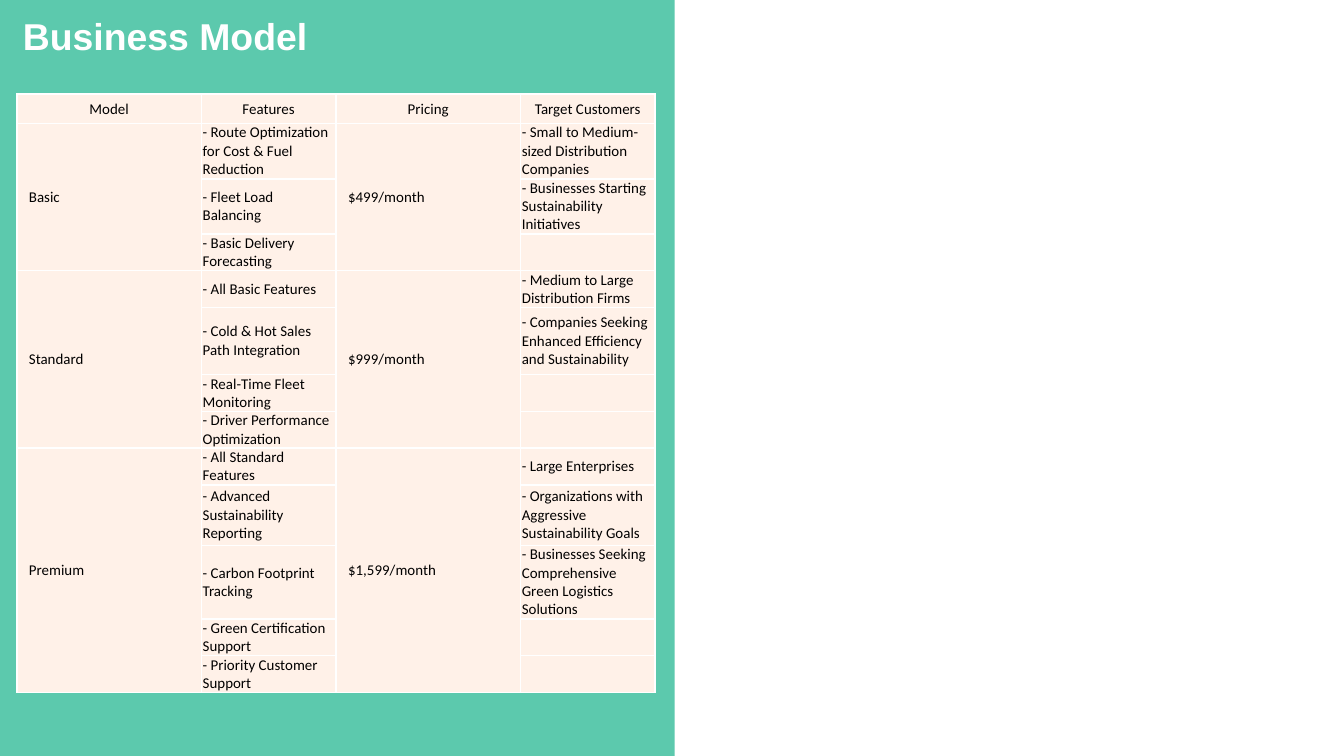
from dataclasses import dataclass
from itertools import zip_longest

from lxml import etree
from pptx import Presentation
from pptx.dml.color import RGBColor
from pptx.enum.shapes import MSO_SHAPE
from pptx.enum.text import MSO_ANCHOR, MSO_AUTO_SIZE, PP_ALIGN
from pptx.oxml.ns import qn
from pptx.slide import Slide
from pptx.table import Table, _Cell
from pptx.util import Inches, Pt

RECTANGLE = MSO_SHAPE.RECTANGLE
TOP, MIDDLE = MSO_ANCHOR.TOP, MSO_ANCHOR.MIDDLE
LEFT, CENTER = PP_ALIGN.LEFT, PP_ALIGN.CENTER
NO_AUTOFIT = MSO_AUTO_SIZE.NONE
TITLE_ONLY = 5

COLORS = {"panel": "5CC9AD", "cell": "FFF1E8", "white": "FFFFFF", "text": "000000"}
SLIDE_WIDTH = Inches(10)
SLIDE_HEIGHT = SLIDE_WIDTH * 9 // 16
PANEL_WIDTH = Inches(5.02)
TABLE_LEFT, TABLE_TOP = SLIDE_WIDTH // 80, Inches(0.7)
TABLE_WIDTH, TABLE_HEIGHT = Inches(4.75), Inches(4.39)
COLUMN_SHARES = [1.37, 1, 1.37, 1]
HEADINGS = ["Model", "Features", "Pricing", "Target Customers"]
HEADER_HEIGHT = 0.22
NARROW_INSET, WIDE_INSET = 0.01, 0.09
CELL_SIZE = Pt(8)


@dataclass
class Plan:
    model: str
    pricing: str
    features: list[str]
    customers: list[str]
    heights: list[float]


PLANS = [
    Plan(
        "Basic",
        "$499/month",
        ["Route Optimization for Cost & Fuel Reduction", "Fleet Load Balancing",
         "Basic Delivery Forecasting"],
        ["Small to Medium-sized Distribution Companies",
         "Businesses Starting Sustainability Initiatives"],
        [0.35, 0.4, 0.2],
    ),
    Plan(
        "Standard",
        "$999/month",
        ["All Basic Features", "Cold & Hot Sales Path Integration",
         "Real-Time Fleet Monitoring", "Driver Performance Optimization"],
        ["Medium to Large Distribution Firms",
         "Companies Seeking Enhanced Efficiency and Sustainability"],
        [0.25, 0.5, 0.25, 0.25],
    ),
    Plan(
        "Premium",
        "$1,599/month",
        ["All Standard Features", "Advanced Sustainability Reporting",
         "Carbon Footprint Tracking", "Green Certification Support",
         "Priority Customer Support"],
        ["Large Enterprises", "Organizations with Aggressive Sustainability Goals",
         "Businesses Seeking Comprehensive Green Logistics Solutions"],
        [0.15, 0.45, 0.45, 0.2, 0.15],
    ),
]


def rgb(name: str) -> RGBColor:
    return RGBColor.from_string(COLORS[name])


def add_borders(cell: _Cell) -> None:
    properties = cell._tc.get_or_add_tcPr()
    for position, side in enumerate(("lnL", "lnR", "lnT", "lnB")):
        border = etree.Element(qn(f"a:{side}"), w=str(int(Pt(1))))
        fill = etree.SubElement(border, qn("a:solidFill"))
        etree.SubElement(fill, qn("a:srgbClr"), val=COLORS["white"])
        properties.insert(position, border)


def fill_cell(cell: _Cell, words: str = "", inset: float = NARROW_INSET,
              align: PP_ALIGN = LEFT) -> None:
    cell.fill.solid()
    cell.fill.fore_color.rgb = rgb("cell")
    add_borders(cell)
    cell.vertical_anchor = MIDDLE
    cell.margin_left = cell.margin_right = Inches(inset)
    cell.margin_top = cell.margin_bottom = 0
    cell.text = words
    paragraph = cell.text_frame.paragraphs[0]
    paragraph.alignment = align
    for run in paragraph.runs:
        run.font.name = "Calibri"
        run.font.size = CELL_SIZE
        run.font.color.rgb = rgb("text")
    etree.SubElement(paragraph._p, qn("a:endParaRPr"), sz=str(int(CELL_SIZE.pt * 100)))


def bullet(words: str) -> str:
    return f"- {words}" if words else ""


def fill_plan(table: Table, first: int, plan: Plan) -> None:
    last = first + len(plan.features) - 1
    entries = zip_longest(plan.features, plan.customers, fillvalue="")
    for row, (feature, customer) in enumerate(entries, first):
        opening = row == first
        fill_cell(table.cell(row, 0), plan.model if opening else "", WIDE_INSET)
        fill_cell(table.cell(row, 1), bullet(feature))
        fill_cell(table.cell(row, 2), plan.pricing if opening else "", WIDE_INSET)
        fill_cell(table.cell(row, 3), bullet(customer))
    for column in (0, 2):
        table.cell(first, column).merge(table.cell(last, column))


def add_pricing_table(slide: Slide) -> None:
    heights = [HEADER_HEIGHT] + [height for plan in PLANS for height in plan.heights]
    pricing = slide.shapes.add_table(
        len(heights), len(COLUMN_SHARES), TABLE_LEFT, TABLE_TOP, TABLE_WIDTH, TABLE_HEIGHT)
    table = pricing.table
    table.first_row = table.horz_banding = False
    for column, share in zip(table.columns, COLUMN_SHARES):
        column.width = int(TABLE_WIDTH * share / sum(COLUMN_SHARES))
    for row, height in zip(table.rows, heights):
        row.height = Inches(height)
    pricing.width, pricing.height = TABLE_WIDTH, TABLE_HEIGHT
    for column, heading in enumerate(HEADINGS):
        fill_cell(table.cell(0, column), heading, align=CENTER)
    first = 1
    for plan in PLANS:
        fill_plan(table, first, plan)
        first += len(plan.features)


def add_title(slide: Slide) -> None:
    title = slide.shapes.title
    title.left, title.top = Inches(0.07), 0
    title.width, title.height = Inches(2.57), Inches(0.43)
    frame = title.text_frame
    frame.text = "Business Model"
    frame.word_wrap = True
    frame.auto_size = NO_AUTOFIT
    frame.vertical_anchor = TOP
    frame.margin_left = frame.margin_right = Inches(0.1)
    frame.margin_top = frame.margin_bottom = Inches(0.1)
    paragraph = frame.paragraphs[0]
    paragraph.alignment = LEFT
    font = paragraph.runs[0].font
    font.name, font.size, font.bold = "Arial", Pt(20), True
    font.color.rgb = rgb("white")


def add_panel(slide: Slide) -> None:
    panel = slide.shapes.add_shape(RECTANGLE, 0, 0, PANEL_WIDTH, SLIDE_HEIGHT)
    panel.shadow.inherit = False
    panel.fill.solid()
    panel.fill.fore_color.rgb = rgb("panel")
    panel.line.fill.background()
    slide.shapes.title.element.addprevious(panel.element)


def main() -> None:
    deck = Presentation()
    deck.slide_width, deck.slide_height = SLIDE_WIDTH, SLIDE_HEIGHT
    slide = deck.slides.add_slide(deck.slide_layouts[TITLE_ONLY])
    add_panel(slide)
    add_title(slide)
    add_pricing_table(slide)
    deck.save("out.pptx")


if __name__ == "__main__":
    main()
